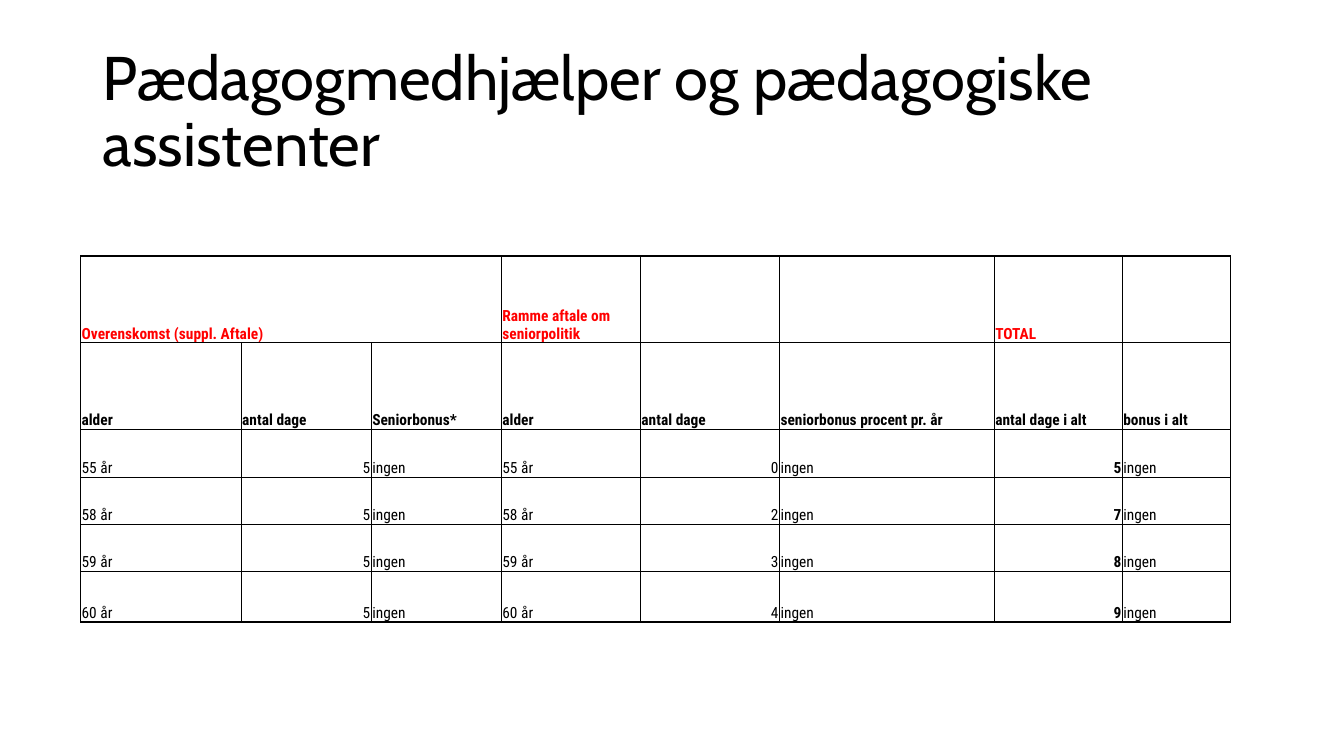
from dataclasses import dataclass

from lxml.etree import SubElement
from pptx import Presentation
from pptx.dml.color import RGBColor
from pptx.enum.text import MSO_ANCHOR, MSO_AUTO_SIZE, PP_ALIGN
from pptx.oxml.ns import qn
from pptx.table import _Cell
from pptx.util import Inches, Length, Pt

BLACK = RGBColor(0x00, 0x00, 0x00)
RED = RGBColor(0xFF, 0x00, 0x00)
WHITE = RGBColor(0xFF, 0xFF, 0xFF)
TITLE_FONT = "Cabin"
TABLE_FONT = "Roboto Condensed"
SLIDE_WIDTH, SLIDE_HEIGHT = Inches(13.33), Inches(7.5)
THIN, THICK = 0.5, 1

# Column widths and row heights in percent of the slide
COLUMN_SHARES = [11.95, 9.68, 9.68, 10.35, 10.35, 15.98, 9.53, 8.03]
ROW_SHARES = [11.47, 11.47, 6.27, 6.27, 6.27, 6.67]
GROUP_STARTS, GROUP_ENDS = {0, 3, 6}, {2, 5, 7}
TOTAL_COLUMN = 6

GROUP_HEADINGS = ["Overenskomst (suppl. Aftale)", "", "",
                  "Ramme aftale om seniorpolitik", "", "", "TOTAL", ""]
COLUMN_HEADINGS = ["alder", "antal dage", "Seniorbonus*", "alder", "antal dage",
                   "seniorbonus procent pr. år", "antal dage i alt", "bonus i alt"]


@dataclass(frozen=True)
class AgeStep:
    age: int
    agreement_days: int
    framework_days: int

    def texts(self) -> list[str]:
        total = self.agreement_days + self.framework_days
        return [f"{self.age} år", str(self.agreement_days), "ingen",
                f"{self.age} år", str(self.framework_days), "ingen",
                str(total), "ingen"]


AGE_STEPS = [AgeStep(55, 5, 0), AgeStep(58, 5, 2), AgeStep(59, 5, 3), AgeStep(60, 5, 4)]


def across(percent: float) -> Length:
    return Length(round(SLIDE_WIDTH * percent / 100))


def down(percent: float) -> Length:
    return Length(round(SLIDE_HEIGHT * percent / 100))


def draw_borders(cell: _Cell, row: int, column: int) -> None:
    """Thick lines around each column group, thin lines inside it."""
    widths = {
        "a:lnL": THICK if column in GROUP_STARTS else THIN,
        "a:lnR": THICK if column in GROUP_ENDS else THIN,
        "a:lnT": THICK if row == 0 else THIN,
        "a:lnB": THICK if row == len(ROW_SHARES) - 1 else THIN,
    }
    # The first group heading runs open across its three columns
    open_sides = set()
    if row == 0 and column in (0, 1):
        open_sides.add("a:lnR")
    if row == 0 and column in (1, 2):
        open_sides.add("a:lnL")

    properties = cell._tc.get_or_add_tcPr()
    for side, width in widths.items():
        line = SubElement(properties, qn(side), w=str(int(Pt(width))))
        if side in open_sides:
            SubElement(line, qn("a:noFill"))
        else:
            fill = SubElement(line, qn("a:solidFill"))
            SubElement(fill, qn("a:srgbClr"), val=str(BLACK))


def write_cell(cell: _Cell, text: str, row: int, column: int) -> None:
    cell.margin_left = cell.margin_right = cell.margin_top = Inches(0.01)
    cell.margin_bottom = 0
    cell.vertical_anchor = MSO_ANCHOR.BOTTOM
    draw_borders(cell, row, column)
    cell.fill.solid()
    cell.fill.fore_color.rgb = WHITE
    if not text:
        return
    cell.text_frame.text = text
    paragraph = cell.text_frame.paragraphs[0]
    paragraph.alignment = PP_ALIGN.RIGHT if text.isdigit() else PP_ALIGN.LEFT
    font = paragraph.runs[0].font
    font.name, font.size = TABLE_FONT, Pt(11)
    font.bold = row < 2 or column == TOTAL_COLUMN
    font.color.rgb = RED if row == 0 else BLACK


presentation = Presentation()
presentation.slide_width, presentation.slide_height = SLIDE_WIDTH, SLIDE_HEIGHT
slide = presentation.slides.add_slide(presentation.slide_layouts[5])

# Title
title = slide.shapes.title
title.left, title.top = across(6.9), down(5.33)
title.width, title.height = across(86.27), down(19.33)
title.text_frame.text = "Pædagogmedhjælper og pædagogiske assistenter"
title.text_frame.word_wrap = True
title.text_frame.auto_size = MSO_AUTO_SIZE.NONE
title.text_frame.vertical_anchor = MSO_ANCHOR.MIDDLE
heading = title.text_frame.paragraphs[0]
heading.alignment = PP_ALIGN.LEFT
heading.line_spacing = 0.9
heading_font = heading.runs[0].font
heading_font.name, heading_font.size = TITLE_FONT, Pt(44)
heading_font.color.rgb = BLACK

# Table of senior days and bonus
senior_table = slide.shapes.add_table(
    len(ROW_SHARES), len(COLUMN_SHARES), across(6), down(33.87),
    across(sum(COLUMN_SHARES)), down(sum(ROW_SHARES))).table
senior_table.first_row = senior_table.horz_banding = False
for table_column, share in zip(senior_table.columns, COLUMN_SHARES):
    table_column.width = across(share)
for table_row, share in zip(senior_table.rows, ROW_SHARES):
    table_row.height = down(share)

table_texts = [GROUP_HEADINGS, COLUMN_HEADINGS, *(step.texts() for step in AGE_STEPS)]
for row_index, row_texts in enumerate(table_texts):
    for column_index, cell_text in enumerate(row_texts):
        write_cell(senior_table.cell(row_index, column_index), cell_text,
                   row_index, column_index)
senior_table.cell(0, 0).merge(senior_table.cell(0, 1))

presentation.save("out.pptx")
